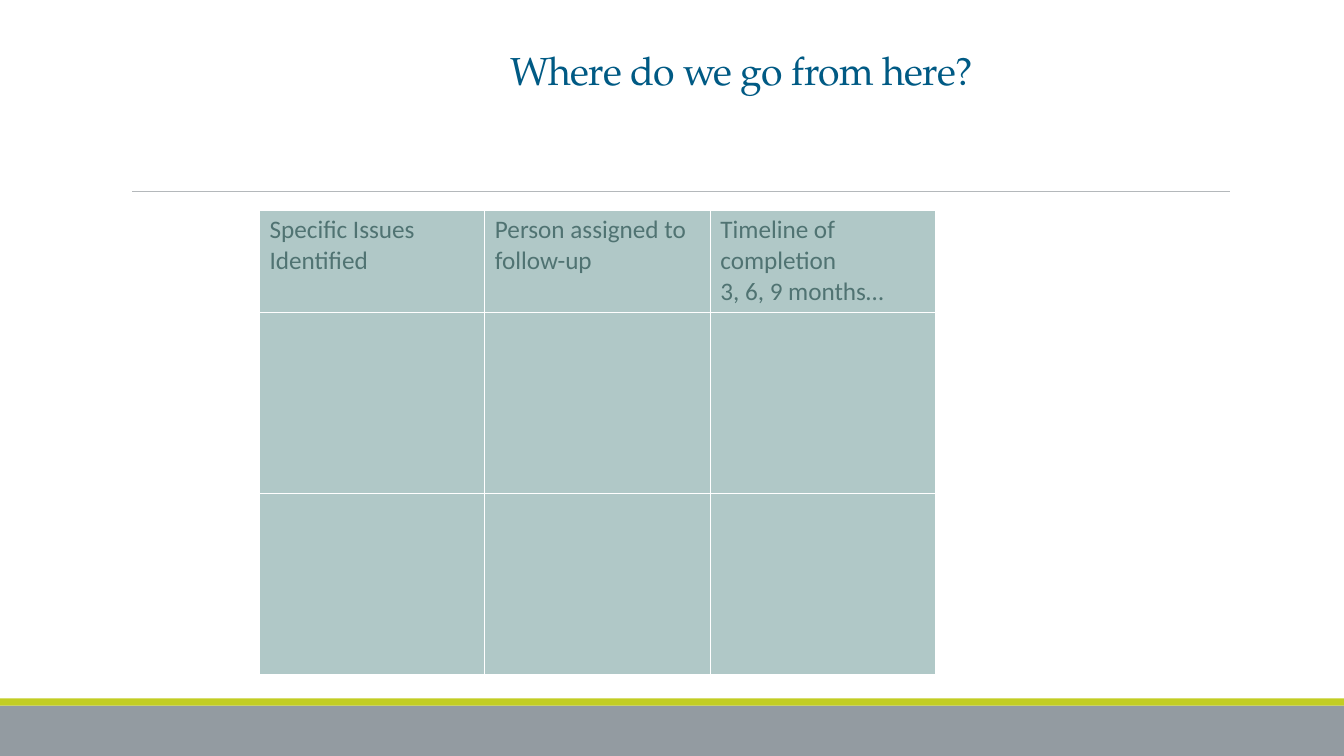
from dataclasses import dataclass

from lxml.etree import SubElement
from pptx import Presentation
from pptx.dml.color import RGBColor
from pptx.enum.shapes import MSO_CONNECTOR, MSO_SHAPE
from pptx.enum.text import MSO_ANCHOR, PP_ALIGN
from pptx.oxml import parse_xml
from pptx.oxml.ns import nsdecls, qn
from pptx.util import Cm, Pt

COLORS = {
    "white": "FFFFFF",
    "gray": "939BA1",
    "lime": "C2CD23",
    "rule": "B4B8BB",
    "blue": "005A84",
    "cell": "B0C8C7",
    "text": "507372",
}
HEADS = [
    "Specific Issues Identified",
    "Person assigned to follow-up",
    "Timeline of completion\n3, 6, 9 months…",
]
ROWS = [2.56, 4.57, 4.57]
WIDTH = 33.87


@dataclass
class Band:
    top: float
    height: float
    color: str


BANDS = [Band(17.78, 1.27, "gray"), Band(17.6, 0.18, "lime")]


def paint(name: str) -> RGBColor:
    return RGBColor.from_string(COLORS[name])


def draw_band(slide, band: Band) -> None:
    bar = slide.shapes.add_shape(
        MSO_SHAPE.RECTANGLE, 0, Cm(band.top), Cm(WIDTH), Cm(band.height))
    bar.shadow.inherit = False
    bar.fill.solid()
    bar.fill.fore_color.rgb = paint(band.color)
    bar.line.fill.background()


def draw_rule(slide) -> None:
    rule = slide.shapes.add_connector(
        MSO_CONNECTOR.STRAIGHT, Cm(3.33), Cm(4.82), Cm(31), Cm(4.82))
    rule.line.color.rgb = paint("rule")
    rule.line.width = Pt(0.75)
    SubElement(rule._element.spPr, qn("a:effectLst"))


def set_title(slide) -> None:
    title = slide.shapes.title
    title.left, title.top = Cm(12.6), Cm(1.17)
    title.width, title.height = Cm(17.04), Cm(1.32)
    frame = title.text_frame
    frame.text = "Where do we go from here?"
    frame.vertical_anchor = MSO_ANCHOR.BOTTOM
    frame.word_wrap = True
    para = frame.paragraphs[0]
    para.alignment = PP_ALIGN.LEFT
    para.line_spacing = 0.85
    font = para.runs[0].font
    font.name, font.size = "TeX Gyre Pagella", Pt(28)
    font.color.rgb = paint("blue")
    font._element.set("spc", "-50")


def style_cell(cell) -> None:
    cell.fill.solid()
    cell.fill.fore_color.rgb = paint("cell")
    # Borders come before the fill
    props = cell._tc.get_or_add_tcPr()
    for spot, side in enumerate("LRTB"):
        props.insert(spot, parse_xml(
            f'<a:ln{side} {nsdecls("a")} w="{Pt(1)}"><a:solidFill>'
            f'<a:srgbClr val="{COLORS["white"]}"/></a:solidFill></a:ln{side}>'))
    for para in cell.text_frame.paragraphs:
        for run in para.runs:
            run.font.name, run.font.size = "Calibri", Pt(18)
            run.font.bold = False
            run.font.color.rgb = paint("text")


def draw_table(slide) -> None:
    table = slide.shapes.add_table(
        len(ROWS), len(HEADS), Cm(6.54), Cm(5.29), Cm(17.04), Cm(sum(ROWS))).table
    for row, height in zip(table.rows, ROWS):
        row.height = Cm(height)
    for cell, head in zip(table.rows[0].cells, HEADS):
        cell.text_frame.text = head
    for cell in table.iter_cells():
        style_cell(cell)


def main() -> None:
    deck = Presentation()
    deck.slide_width, deck.slide_height = Cm(WIDTH), Cm(19.05)
    slide = deck.slides.add_slide(deck.slide_layouts[5])
    # Footer bands and rule
    for band in BANDS:
        draw_band(slide, band)
    draw_rule(slide)
    # Title and follow-up table
    set_title(slide)
    draw_table(slide)
    deck.save("out.pptx")


if __name__ == "__main__":
    main()
